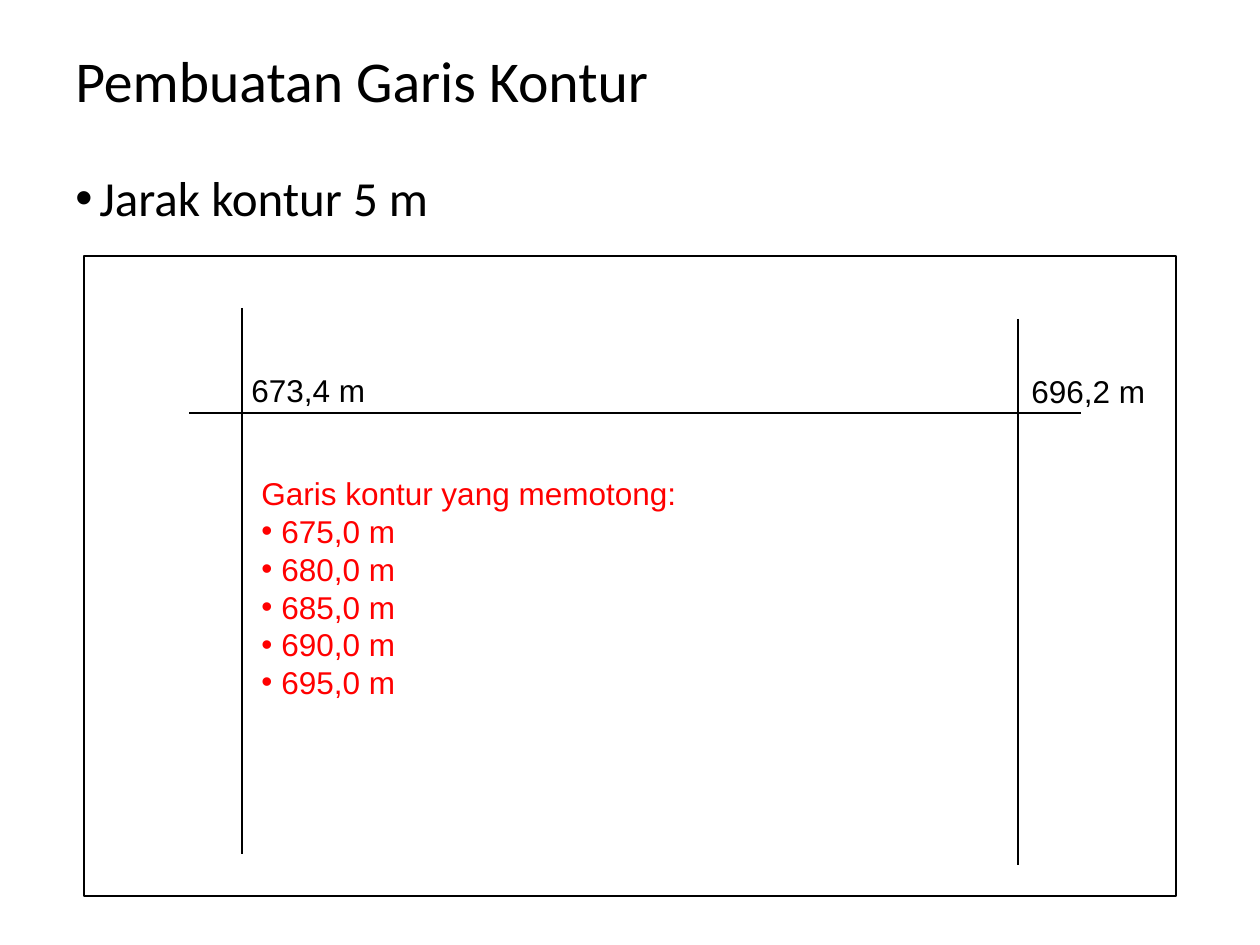
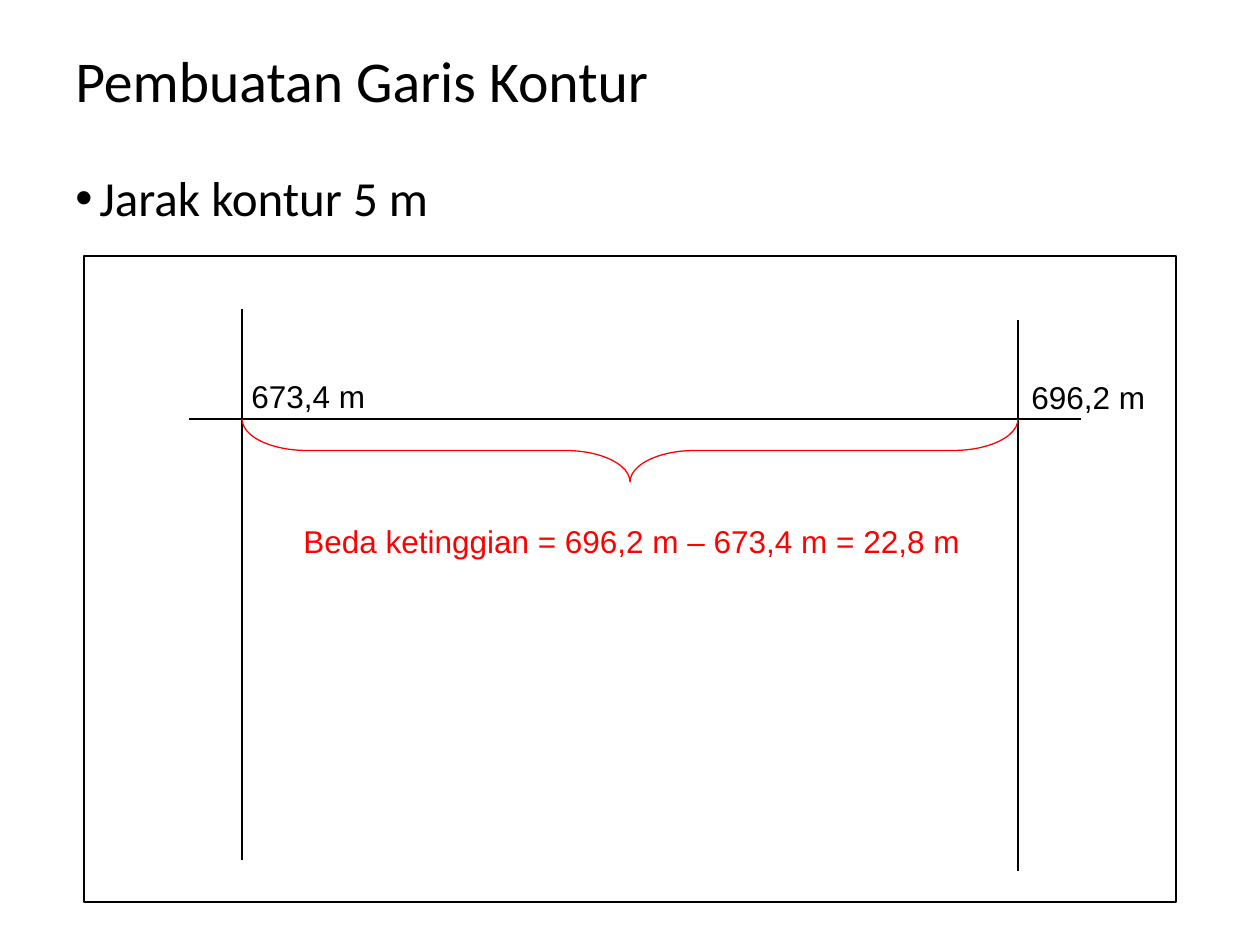
"""Builds two slides on drawing contour lines between two spot heights."""
from dataclasses import dataclass

from lxml.etree import SubElement
from pptx import Presentation
from pptx.dml.color import RGBColor
from pptx.enum.shapes import MSO_CONNECTOR, MSO_SHAPE
from pptx.enum.text import MSO_ANCHOR
from pptx.oxml.ns import qn
from pptx.util import Pt

EMU_PER_PX = 914400 / 126
PAGE_SIZE = 1260, 945
FRAME_TOP = 256
ROD_LEFT, ROD_RIGHT = 242, 1018


def px(length):
    """Turn px into EMU."""
    return round(length * EMU_PER_PX)


@dataclass(frozen=True)
class Theme:
    """Colours, fonts and sizes of the deck."""
    ink: RGBColor = RGBColor(0, 0, 0)
    paper: RGBColor = RGBColor(255, 255, 255)
    accent: RGBColor = RGBColor(255, 0, 0)
    heading_font: str = "Calibri"
    label_font: str = "Arial"
    title_size: int = 33
    body_size: int = 28
    label_size: int = 18
    line_width: float = 0.75


class Sketch:
    """Draws styled elements on the current slide."""

    def __init__(self, deck, theme):
        """Keep the deck and its theme."""
        self.deck, self.theme, self.page = deck, theme, None

    def new_page(self):
        """Start a blank slide."""
        self.page = self.deck.slides.add_slide(self.deck.slide_layouts[6])

    def text(self, left, top, width, height, lines, size, font, color=None,
             bullets_from=None, indent=0, spacing=1.0, wrap=False, anchor=MSO_ANCHOR.TOP):
        """Add a text box, with bullets from the given line on."""
        box = self.page.shapes.add_textbox(px(left), px(top), px(width), px(height))
        frame = box.text_frame
        frame.word_wrap, frame.vertical_anchor = wrap, anchor
        for index, line in enumerate(lines):
            para = frame.paragraphs[0] if index == 0 else frame.add_paragraph()
            para.text = line
            if bullets_from is not None and index >= bullets_from:
                self.bullet(para, indent)
            para.line_spacing = spacing
            para.font.size, para.font.name = Pt(size), font
            para.font.color.rgb = color or self.theme.ink

    def bullet(self, para, indent):
        """Give a paragraph a hanging bullet."""
        properties = para._p.get_or_add_pPr()
        properties.set("marL", str(px(indent)))
        properties.set("indent", str(-px(indent)))
        SubElement(properties, qn("a:buFont")).set("typeface", self.theme.label_font)
        SubElement(properties, qn("a:buChar")).set("char", "•")

    def label(self, left, top, width, height, lines, color=None, bullets_from=None):
        """Add a label in the diagram."""
        self.text(left, top, width, height, lines, self.theme.label_size,
                  self.theme.label_font, color, bullets_from, indent=20)

    def heading(self, title, point):
        """Add the slide title and its bulleted point."""
        theme = self.theme
        self.text(63, 38, 1134, 91, [title], theme.title_size, theme.heading_font,
                  spacing=0.9, wrap=True, anchor=MSO_ANCHOR.MIDDLE)
        self.text(63, 168, 1134, 72, [point], theme.body_size, theme.heading_font,
                  bullets_from=0, indent=24, spacing=0.9, wrap=True)

    def shape(self, kind, left, top, width, height, line, fill=None):
        """Add an outlined preset shape."""
        shape = self.page.shapes.add_shape(kind, px(left), px(top), px(width), px(height))
        shape.shadow.inherit = False
        if fill is None:
            shape.fill.background()
        else:
            shape.fill.solid()
            shape.fill.fore_color.rgb = fill
        shape.line.color.rgb = line
        shape.line.width = Pt(self.theme.line_width)
        return shape

    def brace(self, left, top, width, height):
        """Add a brace that opens upwards and fills the given area."""
        brace = self.shape(MSO_SHAPE.RIGHT_BRACE, left + (width - height) / 2,
                           top + (height - width) / 2, height, width, self.theme.accent)
        brace.rotation = 90
        brace.adjustments[0], brace.adjustments[1] = 1.03, 0.5

    def line(self, x1, y1, x2, y2):
        """Add a straight thin line."""
        line = self.page.shapes.add_connector(
            MSO_CONNECTOR.STRAIGHT, px(x1), px(y1), px(x2), px(y2))
        line.line.color.rgb = self.theme.ink
        line.line.width = Pt(self.theme.line_width)
        SubElement(line._element.spPr, qn("a:effectLst"))

    def profile(self, frame_height, axis, rod_top, rod_height):
        """Add the frame, the axis and two rods with their heights."""
        self.shape(MSO_SHAPE.RECTANGLE, 84, FRAME_TOP, 1092, frame_height,
                   self.theme.ink, self.theme.paper)
        self.line(189, axis, 1081, axis)
        for rod, drop in ((ROD_LEFT, 0), (ROD_RIGHT, 11)):
            self.line(rod, rod_top + drop, rod, rod_top + drop + rod_height)
        self.label(239, axis - 48, 139, 50, ["673,4 m"])
        self.label(1019, axis - 47, 139, 50, ["696,2 m"])


def main():
    """Build and save the deck."""
    deck = Presentation()
    deck.slide_width, deck.slide_height = map(px, PAGE_SIZE)
    theme = Theme()
    sketch = Sketch(deck, theme)
    title, point = "Pembuatan Garis Kontur", "Jarak kontur 5 m"

    sketch.new_page()
    sketch.heading(title, point)
    sketch.profile(frame_height=640, axis=413, rod_top=308, rod_height=546)
    crossings = [f"{height},0 m" for height in range(675, 696, 5)]
    sketch.label(249, 468, 440, 240, ["Garis kontur yang memotong:", *crossings],
                 theme.accent, bullets_from=1)

    sketch.new_page()
    sketch.heading(title, point)
    sketch.profile(frame_height=646, axis=419, rod_top=309, rod_height=551)
    sketch.brace(ROD_LEFT, 419, ROD_RIGHT - ROD_LEFT, 63)
    sketch.label(291, 516, 682, 50, ["Beda ketinggian = 696,2 m – 673,4 m = 22,8 m"],
                 theme.accent)
    deck.save("out.pptx")


if __name__ == "__main__":
    main()
